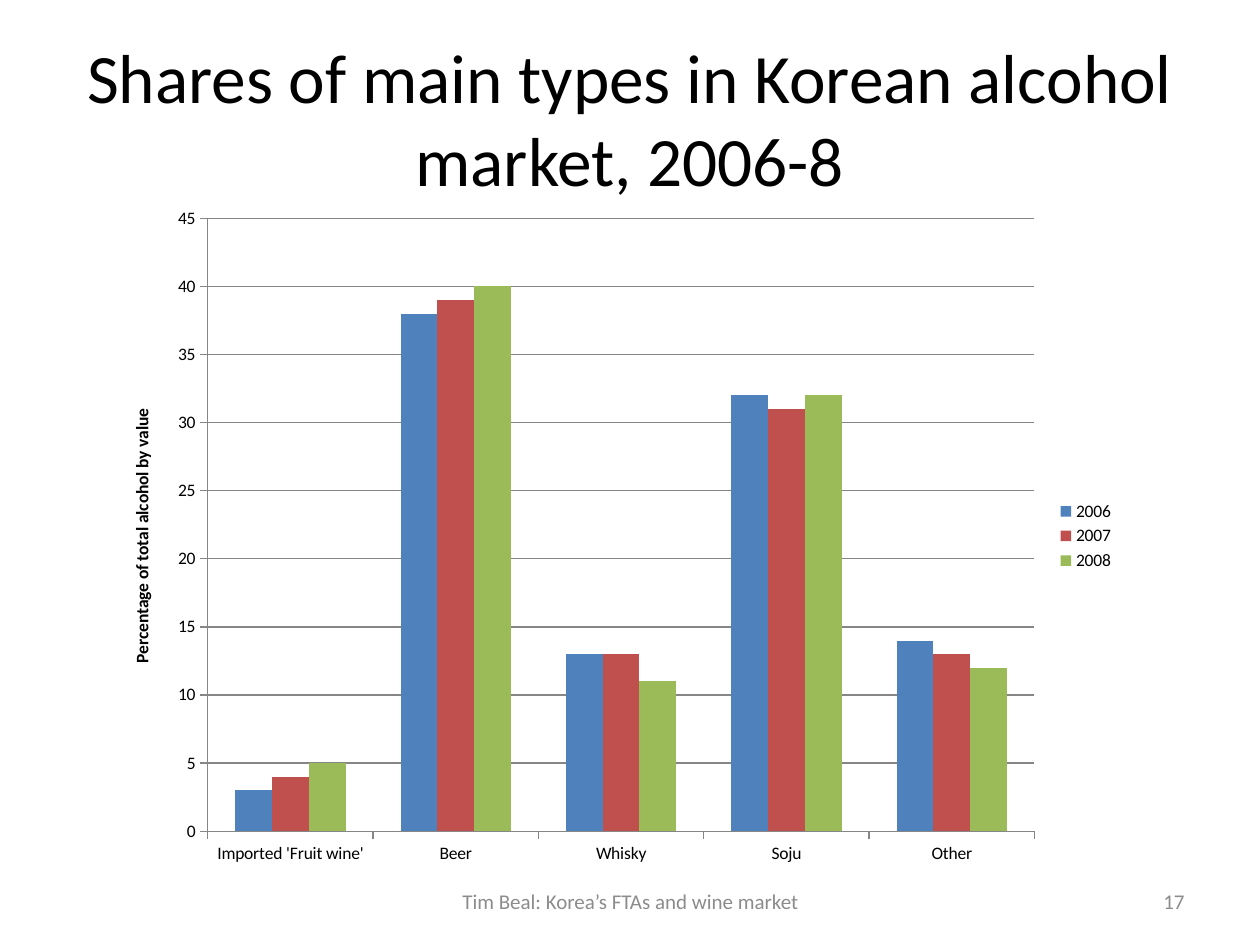
"""Build the slide on shares of alcohol types in the Korean market."""
from pptx import Presentation
from pptx.chart.data import CategoryChartData
from pptx.dml.color import RGBColor
from pptx.enum.chart import XL_CHART_TYPE as ChartType, XL_LEGEND_POSITION as LegendPosition
from pptx.enum.chart import XL_TICK_MARK as TickMark
from pptx.enum.text import MSO_ANCHOR as Anchor, PP_ALIGN as Align
from pptx.util import Emu, Pt

PX_PER_INCH = 126
FONT = "Calibri"
BLACK, GREY, AXIS_GREY = "000000", "8C8C8C", "868686"

CATEGORIES = ["Imported 'Fruit wine'", "Beer", "Whisky", "Soju", "Other"]
SHARES = {
    "2006": ("4F81BD", [3, 38, 13, 32, 14]),
    "2007": ("C0504D", [4, 39, 13, 31, 13]),
    "2008": ("9BBB59", [5, 40, 11, 32, 12]),
}


def px(length):
    """Turn pixels into EMU."""
    return Emu(round(length * 914400 / PX_PER_INCH))


def color(value):
    """Turn a hex string into a colour."""
    return RGBColor.from_string(value)


def style_font(font, size, fill=BLACK, bold=False):
    """Set typeface, size, colour and weight."""
    font.name, font.size, font.bold = FONT, Pt(size), bold
    font.color.rgb = color(fill)


def write(frame, text, size, fill=BLACK, align=Align.CENTER, bold=False):
    """Put one formatted paragraph into a text frame."""
    para = frame.paragraphs[0]
    para.alignment = align
    span = para.add_run()
    span.text = text
    style_font(span.font, size, fill, bold)


class SlideBuilder:
    """Hold the current slide and add styled elements to it."""

    def __init__(self, page):
        """Keep the page to draw on."""
        self.page = page

    def text(self, left, top, width, height, text, **style):
        """Add a wrapped, vertically centred text box."""
        box = self.page.shapes.add_textbox(px(left), px(top), px(width), px(height))
        frame = box.text_frame
        frame.word_wrap = True
        frame.vertical_anchor = Anchor.MIDDLE
        write(frame, text, **style)

    def column_chart(self, left, top, width, height, categories, shares, axis_title):
        """Add a clustered column chart with a legend on the right."""
        data = CategoryChartData(number_format="0")
        data.categories = categories
        for name, (_, values) in shares.items():
            data.add_series(name, values)
        chart = self.page.shapes.add_chart(
            ChartType.COLUMN_CLUSTERED, px(left), px(top), px(width), px(height), data
        ).chart
        style_font(chart.font, 10)
        chart.has_title = False
        chart.has_legend = True
        chart.legend.position = LegendPosition.RIGHT
        chart.legend.include_in_layout = False

        plot = chart.plots[0]
        plot.gap_width, plot.overlap, plot.vary_by_categories = 150, 0, False
        for series, (fill, _) in zip(plot.series, shares.values()):
            series.format.fill.solid()
            series.format.fill.fore_color.rgb = color(fill)

        scale = chart.value_axis
        scale.minimum_scale, scale.maximum_scale, scale.major_unit = 0, 45, 5
        scale.has_major_gridlines = True
        scale.tick_labels.number_format = "0"
        scale.tick_labels.number_format_is_linked = False
        write(scale.axis_title.text_frame, axis_title, size=10, bold=True)
        for axis in (chart.category_axis, scale):
            axis.major_tick_mark = TickMark.OUTSIDE
            axis.minor_tick_mark = TickMark.NONE
        for part in (chart.category_axis, scale, scale.major_gridlines):
            part.format.line.color.rgb = color(AXIS_GREY)
            part.format.line.width = Pt(0.75)


def main():
    """Build and save the deck."""
    deck = Presentation()
    deck.slide_width, deck.slide_height = px(1260), px(945)
    builder = SlideBuilder(deck.slides.add_slide(deck.slide_layouts[6]))
    builder.text(63, 38, 1134, 158,
                 "Shares of main types in Korean alcohol market, 2006-8", size=39.6)
    builder.text(903, 876, 294, 50, "17", size=12, fill=GREY, align=Align.RIGHT)
    builder.text(431, 876, 399, 50, "Tim Beal: Korea’s FTAs and wine market",
                 size=12, fill=GREY)
    builder.column_chart(105, 195, 1022, 682, CATEGORIES, SHARES,
                         "Percentage of total alcohol by value")
    deck.save("out.pptx")


if __name__ == "__main__":
    main()
